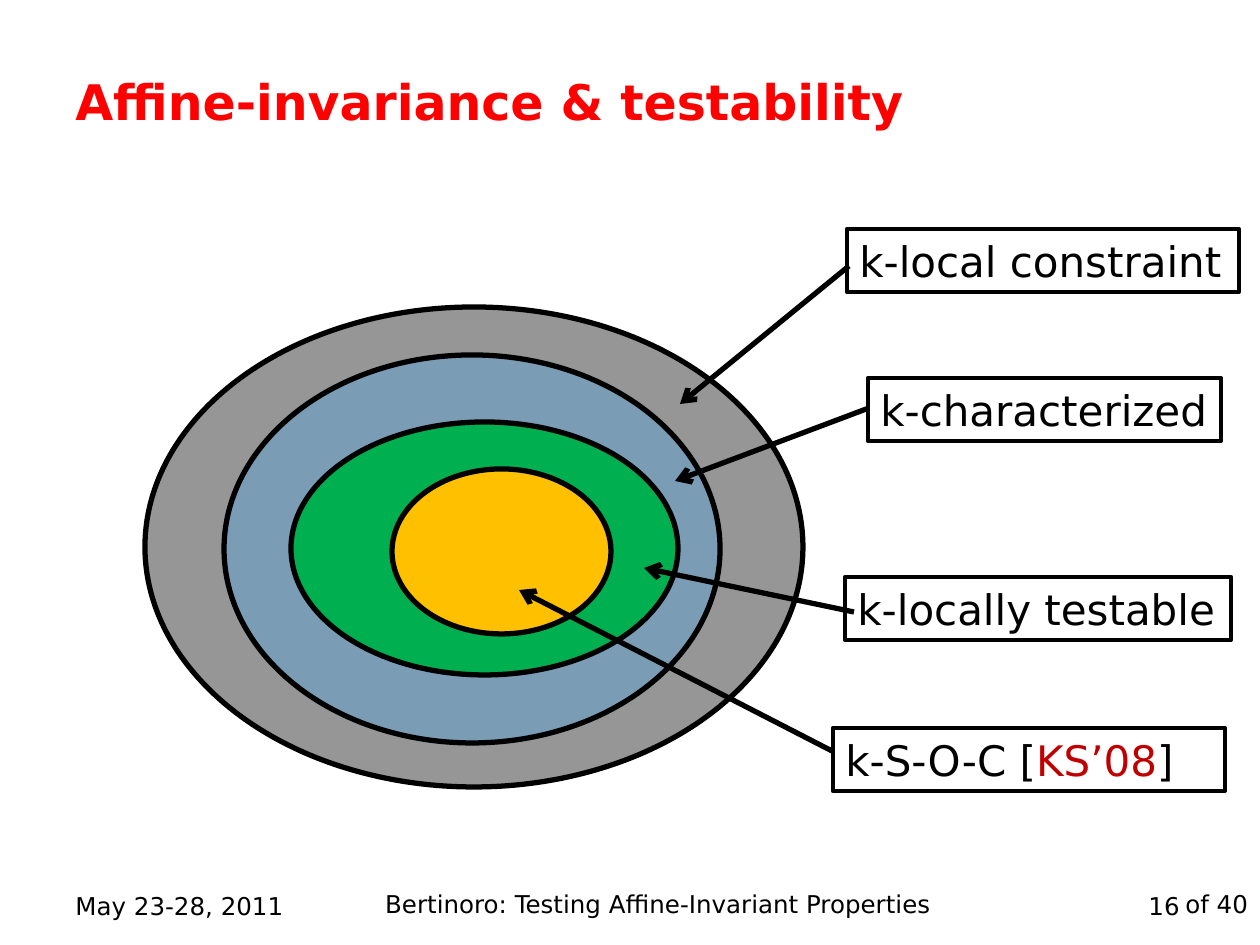
from typing import NamedTuple

from lxml import etree
from pptx import Presentation
from pptx import util as u
from pptx.dml.color import RGBColor
from pptx.enum import shapes, text
from pptx.oxml.ns import qn

FONT = "DejaVu Sans"
BLACK = RGBColor(0x00, 0x00, 0x00)
RED = RGBColor(0xFF, 0x00, 0x00)
DARK_RED = RGBColor(0xC0, 0x00, 0x00)
GRAY = RGBColor(0x96, 0x96, 0x96)
BLUE = RGBColor(0x7B, 0x9C, 0xB5)
GREEN = RGBColor(0x00, 0xB0, 0x50)
GOLD = RGBColor(0xFF, 0xC0, 0x00)

PX_PER_INCH = 126
LABEL_HEIGHT = 63
LEFT, CENTER, RIGHT = text.PP_ALIGN.LEFT, text.PP_ALIGN.CENTER, text.PP_ALIGN.RIGHT
TOP, BOTTOM = text.MSO_ANCHOR.TOP, text.MSO_ANCHOR.BOTTOM


class Box(NamedTuple):
    left: int
    top: int
    width: int
    height: int


class Point(NamedTuple):
    x: int
    y: int


class Run(NamedTuple):
    words: str
    color: RGBColor = BLACK


class PropertyClass(NamedTuple):
    """A nested family of properties, with its label and pointing arrow."""
    region: Box
    fill: RGBColor
    arrow_start: Point
    arrow_end: Point
    label: Box
    runs: tuple[Run, ...]
    wrap: bool = False


class Caption(NamedTuple):
    box: Box
    run: Run
    size: int = 14
    bold: bool = False
    align: text.PP_ALIGN = LEFT
    anchor: text.MSO_ANCHOR = BOTTOM
    wrap: bool = True


# Outermost class first
CLASSES = (
    PropertyClass(Box(145, 307, 658, 480), GRAY, Point(849, 266), Point(680, 404),
                  Box(847, 229, 392, LABEL_HEIGHT), (Run("k-local constraint"),)),
    PropertyClass(Box(224, 355, 496, 388), BLUE, Point(869, 408), Point(675, 481),
                  Box(868, 378, 353, LABEL_HEIGHT), (Run("k-characterized"),)),
    PropertyClass(Box(291, 422, 387, 253), GREEN, Point(854, 612), Point(644, 568),
                  Box(845, 577, 386, LABEL_HEIGHT), (Run("k-locally testable"),)),
    PropertyClass(Box(392, 469, 219, 165), GOLD, Point(834, 752), Point(519, 590),
                  Box(833, 728, 392, LABEL_HEIGHT),
                  (Run("k-S-O-C ["), Run("KS’08", DARK_RED), Run("]")), wrap=True),
)

CAPTIONS = (
    Caption(Box(63, 53, 1134, 84), Run("Affine-invariance & testability", RED), 28, bold=True),
    Caption(Box(63, 861, 294, 66), Run("May 23-28, 2011")),
    Caption(Box(363, 859, 590, 66), Run("Bertinoro: Testing Affine-Invariant Properties"),
            align=CENTER),
    Caption(Box(898, 861, 294, 66), Run("16"), align=RIGHT),
    Caption(Box(1173, 883, 89, 43), Run("of 40"), anchor=TOP, wrap=False),
)


def px(*lengths: int) -> list[u.Emu]:
    return [u.Emu(round(length * 914400 / PX_PER_INCH)) for length in lengths]


def outline(shape, width: float) -> None:
    shape.line.color.rgb = BLACK
    shape.line.width = u.Pt(width)


def add_text(slide, box: Box, runs: tuple[Run, ...], size: int, bold: bool = False,
             align=LEFT, anchor=TOP, wrap: bool = True):
    holder = slide.shapes.add_textbox(*px(*box))
    frame = holder.text_frame
    frame.word_wrap = wrap
    frame.vertical_anchor = anchor
    paragraph = frame.paragraphs[0]
    paragraph.alignment = align
    paragraph.font.name = FONT
    paragraph.font.size = u.Pt(size)
    paragraph.font.bold = bold
    for words, color in runs:
        run = paragraph.add_run()
        run.text = words
        run.font.color.rgb = color
    return holder


def add_arrow(slide, start: Point, end: Point) -> None:
    arrow = slide.shapes.add_connector(shapes.MSO_CONNECTOR.STRAIGHT, *px(*start, *end))
    outline(arrow, 3)
    etree.SubElement(arrow.line._get_or_add_ln(), qn("a:tailEnd"), type="arrow")
    etree.SubElement(arrow._element.spPr, qn("a:effectLst"))


def add_class(slide, item: PropertyClass) -> None:
    region = slide.shapes.add_shape(shapes.MSO_SHAPE.OVAL, *px(*item.region))
    region.shadow.inherit = False
    region.fill.solid()
    region.fill.fore_color.rgb = item.fill
    outline(region, 3)
    add_arrow(slide, item.arrow_start, item.arrow_end)
    label = add_text(slide, item.label, item.runs, 24, wrap=item.wrap)
    outline(label, 2.5)


def main() -> None:
    deck = Presentation()
    deck.slide_width, deck.slide_height = px(1260, 945)
    slide = deck.slides.add_slide(deck.slide_layouts[6])

    # Nested classes with their labels
    for item in CLASSES:
        add_class(slide, item)

    # Title and footer
    for caption in CAPTIONS:
        add_text(slide, caption.box, (caption.run,), caption.size, caption.bold,
                 caption.align, caption.anchor, caption.wrap)

    deck.save("out.pptx")


if __name__ == "__main__":
    main()
